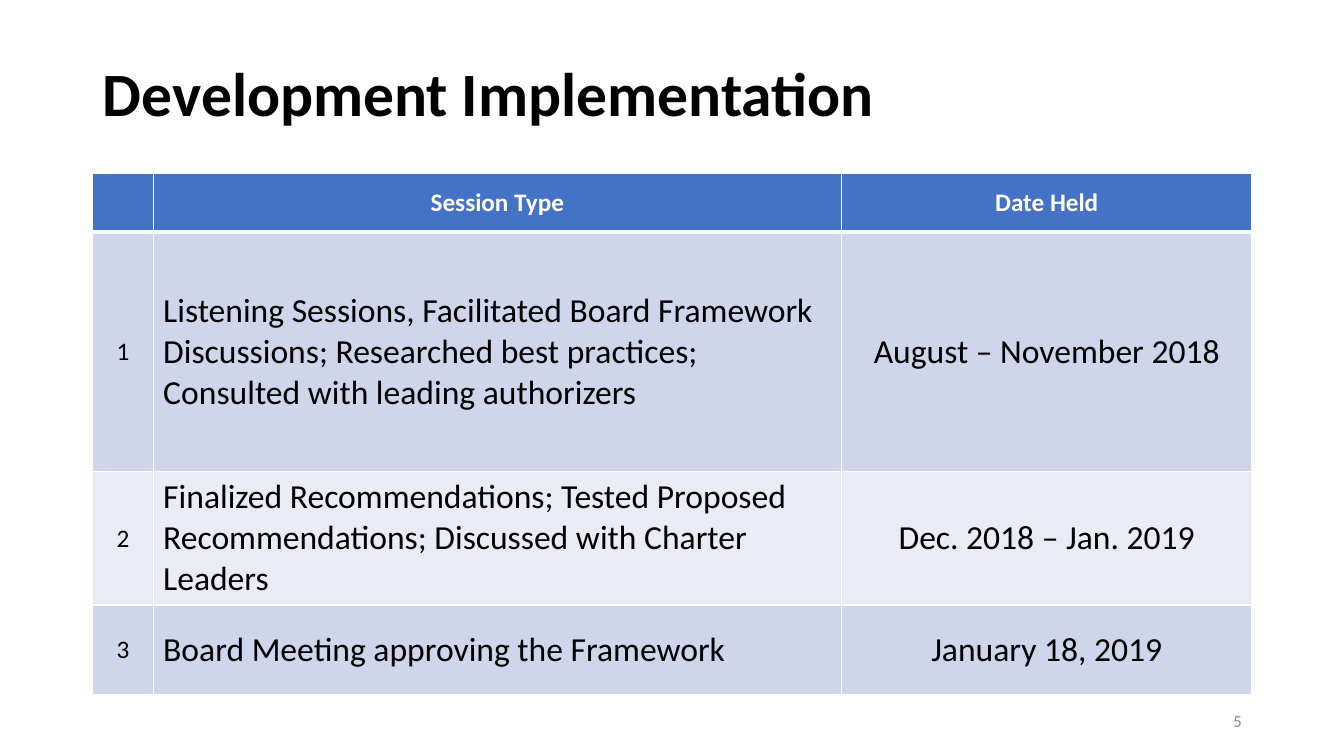
import pptx
import pptx.dml.color
import pptx.enum.text
import pptx.oxml
import pptx.oxml.ns
import pptx.util
from pptx.util import Cm

COLORS = {
    "text": "000000",
    "white": "FFFFFF",
    "header": "4472C4",
    "odd_row": "CFD5EA",
    "even_row": "E9EBF5",
    "number": "8C8C8C",
}
FONT = "Calibri"
ALIGN = pptx.enum.text.PP_ALIGN
MIDDLE = pptx.enum.text.MSO_ANCHOR.MIDDLE

COLUMN_WIDTHS = (1.52, 17.35, 10.34)
ROW_HEIGHTS = (1.47, 6.05, 3.35, 2.26)
SESSIONS = (
    ("", "Session Type", "Date Held"),
    ("1", "Listening Sessions, Facilitated Board Framework Discussions; "
     "Researched best practices; Consulted with leading authorizers",
     "August – November 2018"),
    ("2", "Finalized Recommendations; Tested Proposed Recommendations; "
     "Discussed with Charter Leaders", "Dec. 2018 – Jan. 2019"),
    ("3", "Board Meeting approving the Framework", "January 18, 2019"),
)


def rgb(name):
    return pptx.dml.color.RGBColor.from_string(COLORS[name])


def write_text(text_frame, text, size=24, color="text", bold=False,
               align=ALIGN.LEFT, line_spacing=1.0):
    paragraph = text_frame.paragraphs[0]
    paragraph.alignment = align
    paragraph.line_spacing = line_spacing
    run = paragraph.add_run()
    run.text = text
    run.font.name = FONT
    run.font.size = pptx.util.Pt(size)
    run.font.bold = bold
    run.font.color.rgb = rgb(color)


def set_borders(cell, row_index):
    thick_sides = {0: "B", 1: "T"}
    properties = cell._tc.get_or_add_tcPr()
    for side in "LRTB":
        points = 3 if thick_sides.get(row_index) == side else 1
        properties.append(pptx.oxml.parse_xml(
            f'<a:ln{side} {pptx.oxml.ns.nsdecls("a")} w="{pptx.util.Pt(points)}">'
            f'<a:solidFill><a:srgbClr val="{COLORS["white"]}"/></a:solidFill>'
            f'</a:ln{side}>'))


def add_title(slide, left, top, width, height):
    title = slide.shapes.title
    title.left, title.top, title.width, title.height = left, top, width, height
    title.text_frame.auto_size = pptx.enum.text.MSO_AUTO_SIZE.NONE
    title.text_frame.vertical_anchor = MIDDLE
    write_text(title.text_frame, "Development Implementation", size=44,
               bold=True, line_spacing=0.9)


def add_session_table(slide, left, top, width, height):
    table = slide.shapes.add_table(len(ROW_HEIGHTS), len(COLUMN_WIDTHS),
                                   left, top, width, height).table
    for column, share in zip(table.columns, COLUMN_WIDTHS):
        column.width = int(width * share / sum(COLUMN_WIDTHS))
    for row, share in zip(table.rows, ROW_HEIGHTS):
        row.height = int(height * share / sum(ROW_HEIGHTS))

    for row_index, values in enumerate(SESSIONS):
        header = row_index == 0
        fill = "header" if header else ("even_row", "odd_row")[row_index % 2]
        for column_index, value in enumerate(values):
            cell = table.cell(row_index, column_index)
            set_borders(cell, row_index)
            cell.fill.solid()
            cell.fill.fore_color.rgb = rgb(fill)
            cell.vertical_anchor = MIDDLE
            if value:
                write_text(
                    cell.text_frame, value,
                    size=18 if header or column_index == 0 else 24,
                    color="white" if header else "text",
                    bold=header,
                    align=ALIGN.LEFT if column_index == 1 and not header
                    else ALIGN.CENTER)


def add_slide_number(slide, left, top, width, height):
    text_frame = slide.shapes.add_textbox(left, top, width, height).text_frame
    text_frame.word_wrap = True
    text_frame.vertical_anchor = MIDDLE
    write_text(text_frame, "5", size=12, color="number", align=ALIGN.RIGHT)


def main():
    presentation = pptx.Presentation()
    presentation.slide_width = Cm(33.87)
    presentation.slide_height = Cm(19.05)
    slide = presentation.slides.add_slide(presentation.slide_layouts[5])
    left, width = Cm(2.34), Cm(29.21)
    add_title(slide, left, Cm(1.02), width, Cm(2.84))
    add_session_table(slide, left, Cm(4.37), width, Cm(sum(ROW_HEIGHTS)))
    number_width = Cm(7.62)
    add_slide_number(slide, left + width - number_width, Cm(17.65),
                     number_width, Cm(1.02))
    presentation.save("out.pptx")


if __name__ == "__main__":
    main()
